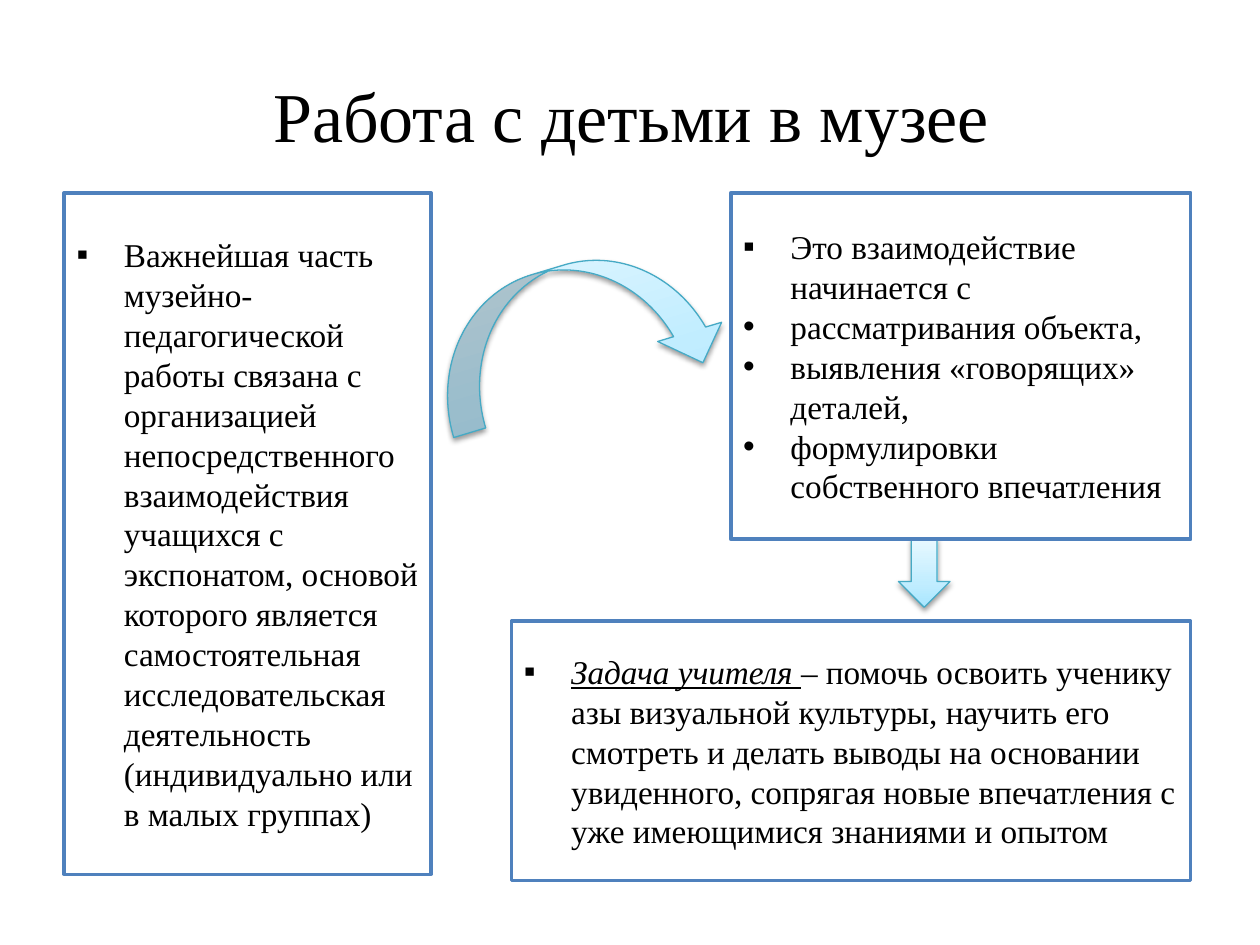
from lxml import etree
from pptx import Presentation
from pptx.dml.color import RGBColor
from pptx.enum.shapes import MSO_SHAPE
from pptx.enum.text import MSO_ANCHOR, PP_ALIGN
from pptx.oxml.ns import qn
from pptx.util import Inches, Pt

RECTANGLE = MSO_SHAPE.RECTANGLE
DOWN_ARROW = MSO_SHAPE.DOWN_ARROW
CURVED_ARROW = MSO_SHAPE.CURVED_DOWN_ARROW
MIDDLE = MSO_ANCHOR.MIDDLE
LEFT, CENTER = PP_ALIGN.LEFT, PP_ALIGN.CENTER

COLORS = {
    "text": "000000",
    "panel": "FFFFFF",
    "panel_line": "4F81BD",
    "arrow_line": "46AAC5",
    "shadow": "000000",
}
ARROW_STOPS = [(0, "A7E6FF"), (35, "C1EDFF"), (100, "E7F8FF")]
FONT = "Times New Roman"
BODY = {"name": FONT, "size": Pt(19), "italic": False, "underline": False}
EMPHASIS = {**BODY, "italic": True, "underline": True}
TITLE = {"name": FONT, "size": Pt(40), "bold": False}

SLIDE_WIDTH, SLIDE_HEIGHT = Inches(10), Inches(7.5)
COLUMNS, ROWS = 100, 75
INDENT = Pt(27)
SQUARE, DOT = "▪", "•"

PANELS = [
    ((5.1, 15.3, 29.1, 54.1), [
        (SQUARE, [("Важнейшая часть музейно-педагогической работы связана с "
                   "организацией непосредственного взаимодействия учащихся с "
                   "экспонатом, основой которого является самостоятельная "
                   "исследовательская деятельность (индивидуально или в малых "
                   "группах)", BODY)]),
    ]),
    ((58, 15.3, 36.5, 27.5), [
        (SQUARE, [("Это взаимодействие начинается с", BODY)]),
        (DOT, [("рассматривания объекта,", BODY)]),
        (DOT, [("выявления «говорящих» деталей,", BODY)]),
        (DOT, [("формулировки собственного впечатления", BODY)]),
    ]),
    ((40.6, 49.3, 53.9, 20.6), [
        (SQUARE, [("Задача учителя ", EMPHASIS),
                  ("– помочь освоить ученику азы визуальной культуры, научить "
                   "его смотреть и делать выводы на основании увиденного, "
                   "сопрягая новые впечатления с уже имеющимися знаниями и "
                   "опытом", BODY)]),
    ]),
]
ARROWS = [
    (CURVED_ARROW, (34, 21, 23.3, 10.6), 343.3),
    (DOWN_ARROW, (71.3, 42.8, 4.1, 5.4), 0),
]


def color(name):
    return RGBColor.from_string(COLORS[name])


def place(box):
    """Turn a box in grid columns and rows into slide lengths."""
    column, row = SLIDE_WIDTH / COLUMNS, SLIDE_HEIGHT / ROWS
    return [round(value * unit) for value, unit in zip(box, (column, row) * 2)]


def add_element(parent, tag, **attributes):
    element = etree.SubElement(parent, qn(tag))
    for name, value in attributes.items():
        element.set(name, str(value))
    return element


def add_run(paragraph, text, font_format):
    run = paragraph.add_run()
    run.text = text
    for name, value in font_format.items():
        setattr(run.font, name, value)
    run.font.color.rgb = color("text")


def add_bullet(paragraph, character):
    properties = paragraph._p.get_or_add_pPr()
    properties.set("marL", str(INDENT))
    properties.set("indent", str(-INDENT))
    add_element(properties, "a:buFont", typeface="Arial")
    add_element(properties, "a:buChar", char=character)


def add_title(slide, box, text):
    title = slide.shapes.title
    title.left, title.top, title.width, title.height = place(box)
    title.text_frame.vertical_anchor = MIDDLE
    paragraph = title.text_frame.paragraphs[0]
    paragraph.alignment = CENTER
    add_run(paragraph, text, TITLE)


def add_panel(slide, box, items):
    panel = slide.shapes.add_shape(RECTANGLE, *place(box))
    panel.shadow.inherit = False
    panel.fill.solid()
    panel.fill.fore_color.rgb = color("panel")
    panel.line.color.rgb = color("panel_line")
    panel.line.width = Pt(2)
    frame = panel.text_frame
    frame.word_wrap = True
    frame.vertical_anchor = MIDDLE
    for index, (bullet, runs) in enumerate(items):
        paragraph = frame.add_paragraph() if index else frame.paragraphs[0]
        paragraph.alignment = LEFT
        add_bullet(paragraph, bullet)
        for text, font_format in runs:
            add_run(paragraph, text, font_format)


def add_soft_shadow(shape):
    shape.shadow.inherit = False
    effects = shape._element.spPr.find(qn("a:effectLst"))
    shadow = add_element(effects, "a:outerShdw", blurRad=Pt(3.1), dist=Pt(1.6),
                         dir=90 * 60000, rotWithShape=0)
    shade = add_element(shadow, "a:srgbClr", val=COLORS["shadow"])
    add_element(shade, "a:alpha", val=38000)


def add_arrow(slide, kind, box, rotation):
    arrow = slide.shapes.add_shape(kind, *place(box))
    arrow.rotation = rotation
    arrow.fill.gradient()
    arrow.fill.gradient_angle = 90
    stops = next(arrow._element.spPr.iter(qn("a:gsLst")))
    for stop in list(stops):
        stops.remove(stop)
    for percent, value in ARROW_STOPS:
        stop = add_element(stops, "a:gs", pos=percent * 1000)
        add_element(stop, "a:srgbClr", val=value)
    arrow.line.color.rgb = color("arrow_line")
    arrow.line.width = Pt(0.75)
    add_soft_shadow(arrow)


def main():
    presentation = Presentation()
    presentation.slide_width = SLIDE_WIDTH
    presentation.slide_height = SLIDE_HEIGHT
    slide = presentation.slides.add_slide(presentation.slide_layouts[5])
    for kind, box, rotation in ARROWS:
        add_arrow(slide, kind, box, rotation)
    for box, items in PANELS:
        add_panel(slide, box, items)
    add_title(slide, (5.1, 5.2, 90, 7.8), "Работа с детьми в музее")
    presentation.save("out.pptx")


if __name__ == "__main__":
    main()
